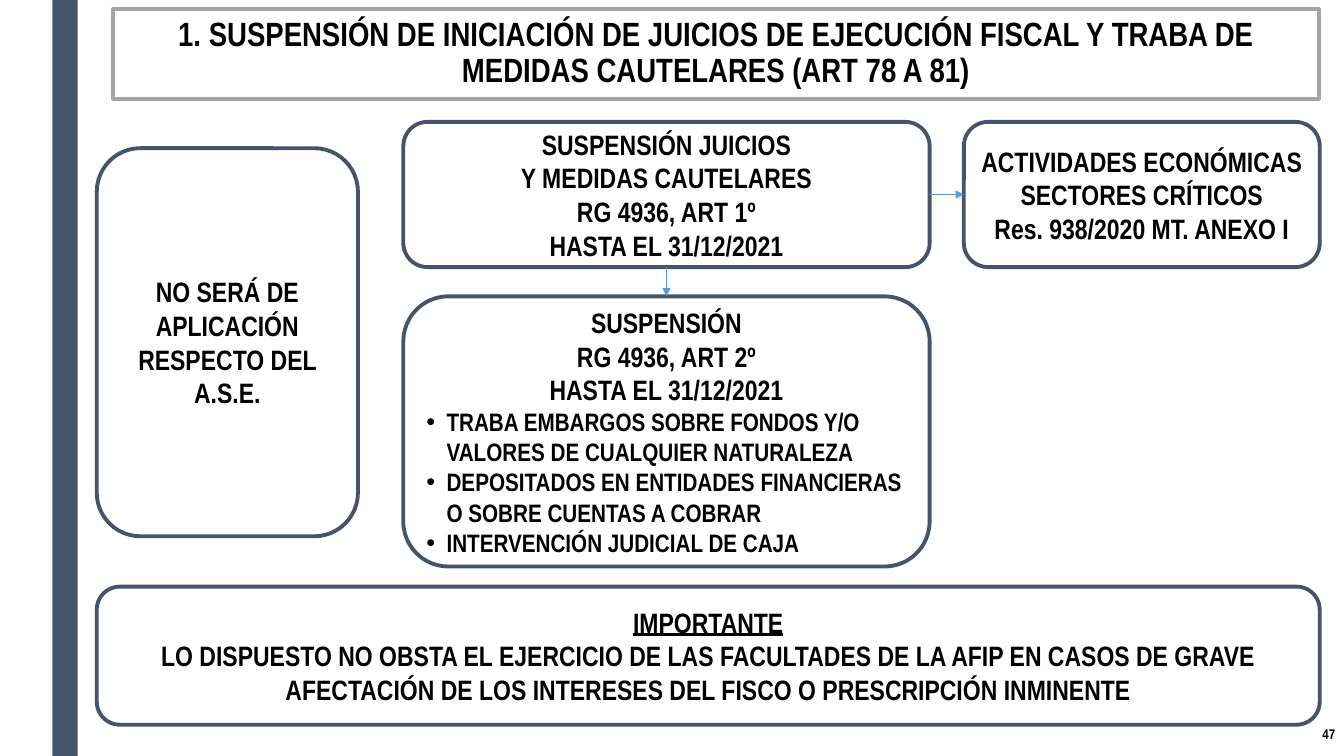
from lxml import etree
from pptx import Presentation
from pptx.dml.color import RGBColor
from pptx.enum.shapes import MSO_CONNECTOR, MSO_SHAPE
from pptx.enum.text import MSO_ANCHOR, MSO_AUTO_SIZE, PP_ALIGN
from pptx.oxml.ns import qn
from pptx.util import Inches, Pt

FONT = "Arial Narrow"
COLORS = {"navy": "44546A", "gray": "A5A5A5", "blue": "5B9BD5",
          "white": "FFFFFF", "black": "000000"}

TITLE = ("1. SUSPENSIÓN DE INICIACIÓN DE JUICIOS DE EJECUCIÓN FISCAL "
         "Y TRABA DE MEDIDAS CAUTELARES (ART 78 A 81)")
PAGE = "47"

# name: (left, top, width, height), [(text, style)]
BOXES = {
    "juicios": ((4, 1.21, 5.22, 1.44), [
        ("SUSPENSIÓN JUICIOS", "plain"),
        ("Y MEDIDAS CAUTELARES", "plain"),
        ("RG 4936, ART 1º", "plain"),
        ("HASTA EL 31/12/2021", "plain")]),
    "embargos": ((4, 2.94, 5.22, 2.68), [
        ("SUSPENSIÓN", "plain"),
        ("RG 4936, ART 2º", "plain"),
        ("HASTA EL 31/12/2021", "plain"),
        ("TRABA EMBARGOS SOBRE FONDOS Y/O VALORES DE CUALQUIER NATURALEZA", "bullet"),
        ("DEPOSITADOS EN ENTIDADES FINANCIERAS O SOBRE CUENTAS A COBRAR", "bullet"),
        ("INTERVENCIÓN JUDICIAL DE CAJA", "bullet")]),
    "ase": ((0.96, 1.47, 2.59, 3.85), [
        ("NO SERÁ DE APLICACIÓN RESPECTO DEL A.S.E.", "plain")]),
    "importante": ((0.96, 5.82, 12.13, 1.37), [
        ("IMPORTANTE", "underline"),
        ("LO DISPUESTO NO OBSTA EL EJERCICIO DE LAS FACULTADES DE LA AFIP EN CASOS "
         "DE GRAVE AFECTACIÓN DE LOS INTERESES DEL FISCO O PRESCRIPCIÓN INMINENTE",
         "plain")]),
    "sectores": ((9.56, 1.21, 3.53, 1.44), [
        ("ACTIVIDADES ECONÓMICAS", "plain"),
        ("SECTORES CRÍTICOS", "plain"),
        ("Res. 938/2020 MT. ANEXO I", "plain")]),
}
# from box, side, to box, side
ARROWS = [("juicios", 2, "embargos", 0), ("juicios", 3, "sectores", 1)]


def rgb(name):
    return RGBColor.from_string(COLORS[name])


def inches(box):
    return [Inches(v) for v in box]


def paint(sp, fill, line=None):
    sp.fill.solid()
    sp.fill.fore_color.rgb = rgb(fill)
    if line:
        sp.line.color.rgb = rgb(line)
        sp.line.width = Pt(2.75)
    else:
        sp.line.fill.background()


def setup_text(tf):
    tf.word_wrap = True
    tf.auto_size = MSO_AUTO_SIZE.NONE
    tf.vertical_anchor = MSO_ANCHOR.MIDDLE


def add_run(p, text, size, align=PP_ALIGN.CENTER):
    p.alignment = align
    r = p.add_run()
    r.text = text
    r.font.name = FONT
    r.font.size = Pt(size)
    r.font.bold = True
    r.font.color.rgb = rgb("black")
    return r


def add_bullet(p):
    pPr = p._p.get_or_add_pPr()
    pPr.set("marL", str(Inches(0.2)))
    pPr.set("indent", str(Inches(-0.2)))
    etree.SubElement(pPr, qn("a:buFont")).set("typeface", "Arial")
    etree.SubElement(pPr, qn("a:buChar")).set("char", "•")


def add_box(s, box, lines):
    sp = s.shapes.add_shape(MSO_SHAPE.ROUNDED_RECTANGLE, *inches(box))
    sp.shadow.inherit = False
    paint(sp, "white", "navy")
    tf = sp.text_frame
    setup_text(tf)
    for i, (text, style) in enumerate(lines):
        p = tf.paragraphs[0] if i == 0 else tf.add_paragraph()
        if style == "bullet":
            add_run(p, text, 18, PP_ALIGN.LEFT)
            add_bullet(p)
        else:
            r = add_run(p, text, 20)
            if style == "underline":
                r.font.underline = True
    return sp


def add_arrow(s, start, start_side, end, end_side):
    c = s.shapes.add_connector(MSO_CONNECTOR.STRAIGHT, 0, 0, 0, 0)
    c.begin_connect(start, start_side)
    c.end_connect(end, end_side)
    c.line.color.rgb = rgb("blue")
    c.line.width = Pt(0.5)
    etree.SubElement(c.line._get_or_add_ln(), qn("a:tailEnd")).set("type", "triangle")
    etree.SubElement(c._element.spPr, qn("a:effectLst"))


def main():
    prs = Presentation()
    prs.slide_width, prs.slide_height = Inches(13.33), Inches(7.5)
    s = prs.slides.add_slide(prs.slide_layouts[5])

    band = s.shapes.add_shape(MSO_SHAPE.RECTANGLE, *inches((0.52, 0, 0.25, 7.5)))
    band.shadow.inherit = False
    paint(band, "navy")

    title = s.shapes.title
    title.left, title.top, title.width, title.height = inches((1.12, 0.09, 11.96, 0.89))
    paint(title, "white", "gray")
    setup_text(title.text_frame)
    p = title.text_frame.paragraphs[0]
    p.line_spacing = 0.89
    add_run(p, TITLE, 24)

    page = s.shapes.add_textbox(*inches((11.59, 7.06, 1.75, 0.44)))
    setup_text(page.text_frame)
    add_run(page.text_frame.paragraphs[0], PAGE, 10, PP_ALIGN.RIGHT)

    boxes = {name: add_box(s, box, lines) for name, (box, lines) in BOXES.items()}
    # The longest line of this box needs narrower side margins
    tf = boxes["sectores"].text_frame
    tf.margin_left = tf.margin_right = Inches(0.05)

    for start, start_side, end, end_side in ARROWS:
        add_arrow(s, boxes[start], start_side, boxes[end], end_side)

    prs.save("out.pptx")


if __name__ == "__main__":
    main()
